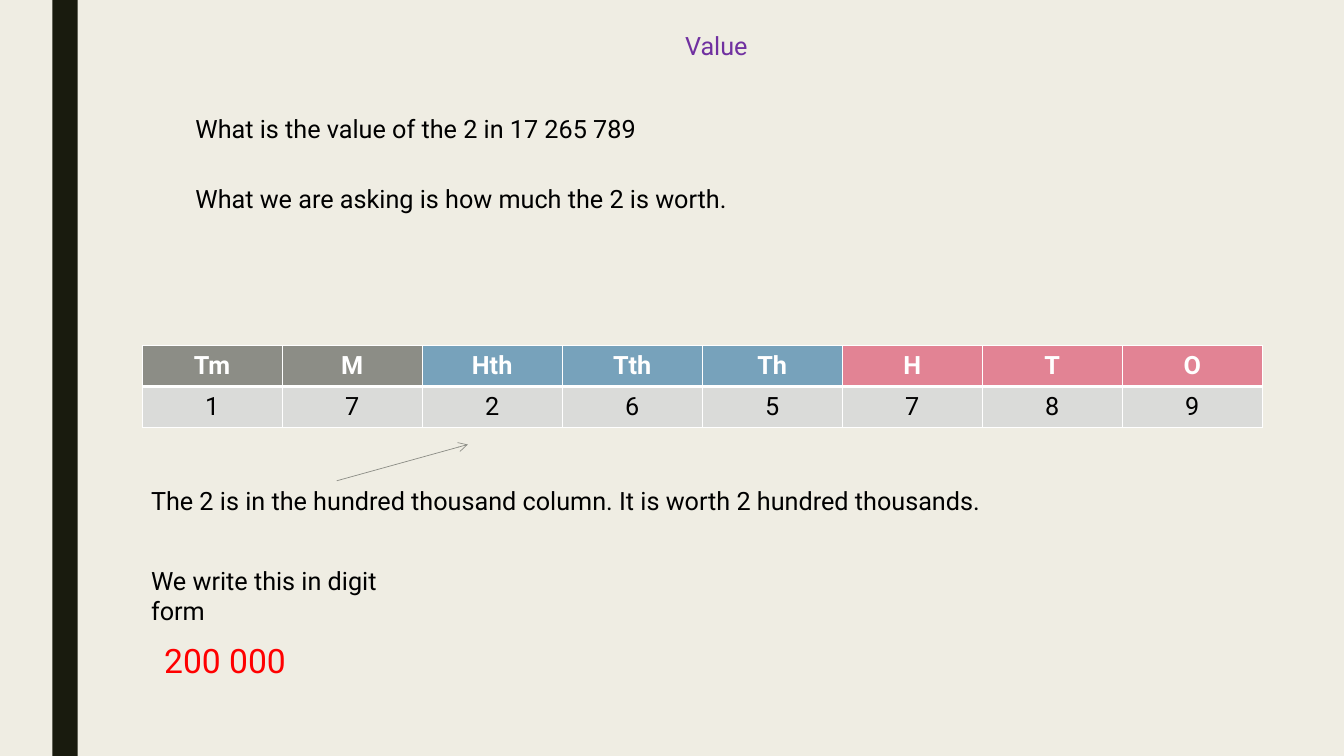
from dataclasses import dataclass

from lxml.etree import SubElement
from pptx import Presentation
from pptx.dml.color import RGBColor
from pptx.enum.shapes import MSO_CONNECTOR as Connector, MSO_SHAPE as Shape
from pptx.enum.text import MSO_ANCHOR as Anchor, PP_ALIGN as Align
from pptx.oxml import parse_xml
from pptx.oxml.ns import nsdecls, qn
from pptx.slide import Slide
from pptx.table import _Cell as Cell
from pptx.text.text import TextFrame
from pptx.util import Inches, Pt

FONT = "Roboto"
COLORS = {
    "background": "EFEDE3",
    "bar": "191B0E",
    "title": "7030A0",
    "text": "000000",
    "answer": "FF0000",
    "white": "FFFFFF",
    "millions": "8C8D86",
    "thousands": "77A2BB",
    "ones": "E28394",
    "digit": "DADBD9",
    "arrow": "8C8D86",
}


@dataclass
class Label:
    text: str
    left: float
    top: float
    width: float
    height: float = 0.4
    size: int = 18
    color: str = "text"
    align: Align = Align.LEFT


@dataclass
class Place:
    name: str
    digit: str
    period: str


LABELS = [
    Label("Value", 2.08, 0.25, 10.05, color="title", align=Align.CENTER),
    Label("What is the value of the 2 in 17 265 789", 1.84, 1.08, 4.72),
    Label("What we are asking is how much the 2 is worth.", 1.84, 1.77, 5.6),
    Label("The 2 is in the hundred thousand column. It is worth 2 hundred thousands.",
          1.4, 4.77, 8.57),
    Label("We write this in digit form", 1.4, 5.56, 3.0),
    Label("200 000", 1.53, 6.3, 1.42, height=0.5, size=24, color="answer"),
]

PLACES = [
    Place("Tm", "1", "millions"),
    Place("M", "7", "millions"),
    Place("Hth", "2", "thousands"),
    Place("Tth", "6", "thousands"),
    Place("Th", "5", "thousands"),
    Place("H", "7", "ones"),
    Place("T", "8", "ones"),
    Place("O", "9", "ones"),
]


def rgb(name: str) -> RGBColor:
    return RGBColor.from_string(COLORS[name])


def write(tf: TextFrame, text: str, size: int, color: str, align: Align,
          bold: bool = False) -> None:
    tf.text = text
    p = tf.paragraphs[0]
    p.alignment = align
    font = p.runs[0].font
    font.name, font.size, font.bold = FONT, Pt(size), bold
    font.color.rgb = rgb(color)


def add_label(s: Slide, label: Label) -> None:
    box = s.shapes.add_textbox(Inches(label.left), Inches(label.top),
                               Inches(label.width), Inches(label.height))
    box.text_frame.word_wrap = True
    write(box.text_frame, label.text, label.size, label.color, label.align)


def set_borders(cell: Cell, top: float, bottom: float) -> None:
    tc_pr = cell._tc.get_or_add_tcPr()
    for i, (side, width) in enumerate(zip("LRTB", (1, 1, top, bottom))):
        tc_pr.insert(i, parse_xml(
            f'<a:ln{side} {nsdecls("a")} w="{Pt(width)}"><a:solidFill>'
            f'<a:srgbClr val="{COLORS["white"]}"/></a:solidFill></a:ln{side}>'))


def fill_cell(cell: Cell, text: str, fill: str, header: bool) -> None:
    cell.vertical_anchor = Anchor.MIDDLE
    cell.fill.solid()
    cell.fill.fore_color.rgb = rgb(fill)
    write(cell.text_frame, text, 18, "white" if header else "text", Align.CENTER, header)
    set_borders(cell, *((1, 3) if header else (3, 1)))


def add_place_table(s: Slide, places: list[Place]) -> None:
    table = s.shapes.add_table(2, len(places), Inches(1.41), Inches(3.43),
                               Inches(11.11), Inches(0.81)).table
    for col, place in enumerate(places):
        fill_cell(table.cell(0, col), place.name, place.period, True)
        fill_cell(table.cell(1, col), place.digit, "digit", False)


def add_arrow(s: Slide) -> None:
    arrow = s.shapes.add_connector(Connector.STRAIGHT, Inches(3.34), Inches(4.77),
                                   Inches(4.64), Inches(4.41))
    arrow.line.color.rgb = rgb("arrow")
    arrow.line.width = Pt(0.5)
    SubElement(arrow.line._get_or_add_ln(), qn("a:tailEnd"), type="arrow")
    SubElement(arrow._element.spPr, qn("a:effectLst"))


def add_side_bar(s: Slide) -> None:
    bar = s.shapes.add_shape(Shape.RECTANGLE, Inches(0.52), 0, Inches(0.25), Inches(7.5))
    bar.shadow.inherit = False
    bar.fill.solid()
    bar.fill.fore_color.rgb = rgb("bar")
    bar.line.fill.background()


def main() -> None:
    prs = Presentation()
    prs.slide_width, prs.slide_height = Inches(13.33), Inches(7.5)
    s = prs.slides.add_slide(prs.slide_layouts[6])

    # Background and side bar
    s.background.fill.solid()
    s.background.fill.fore_color.rgb = rgb("background")
    add_side_bar(s)

    # Place value table with the arrow to the 2
    add_place_table(s, PLACES)
    add_arrow(s)

    # Title, question and answer
    for label in LABELS:
        add_label(s, label)

    prs.save("out.pptx")


if __name__ == "__main__":
    main()
